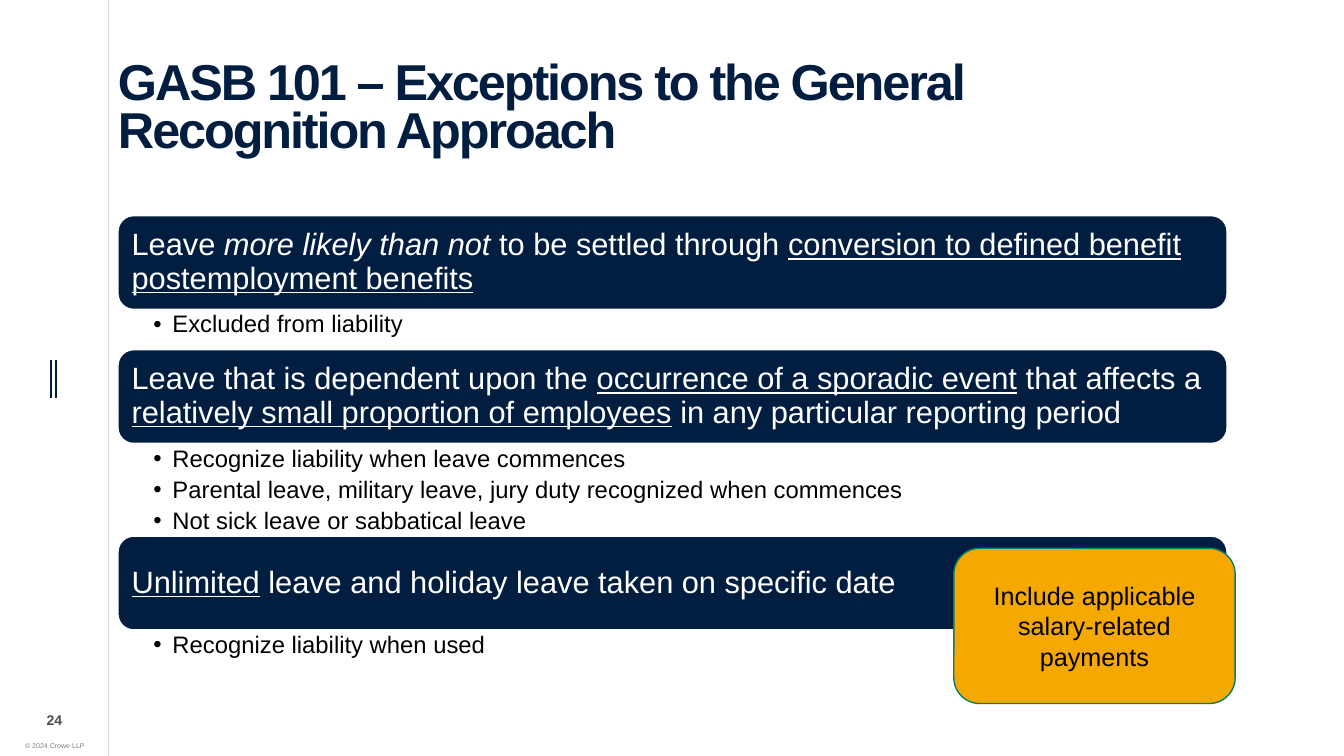
from dataclasses import dataclass

from lxml import etree
from pptx import Presentation
from pptx.dml.color import RGBColor
from pptx.enum.shapes import MSO_CONNECTOR, MSO_SHAPE
from pptx.enum.text import MSO_ANCHOR, PP_ALIGN
from pptx.oxml.ns import qn
from pptx.util import Inches, Pt

STRAIGHT = MSO_CONNECTOR.STRAIGHT
ROUND = MSO_SHAPE.ROUNDED_RECTANGLE
MIDDLE, TOP = MSO_ANCHOR.MIDDLE, MSO_ANCHOR.TOP
CENTER, LEFT = PP_ALIGN.CENTER, PP_ALIGN.LEFT
WIDE, HIGH = Inches(13.33), Inches(7.5)


@dataclass(frozen=True)
class Theme:
    """Colours and type sizes of the slide."""
    font: str = "Arial"
    navy: str = "011E41"
    gold: str = "F5A800"
    green: str = "047F68"
    white: str = "FFFFFF"
    black: str = "000000"
    gray: str = "808080"
    title: float = 36
    bar: float = 22
    note: float = 18
    point: float = 17
    page: float = 10
    legal: float = 5


THEME = Theme()
EDGE, SPAN = 8.78, 82.52
START, BAR, LIST, STEP = 28.53, 12.4, 5.33, 3.47

TOPICS = [
    ([("Leave ", ""), ("more likely than not", "i"),
      (" to be settled through ", ""),
      ("conversion to defined benefit postemployment benefits", "u")],
     ["Excluded from liability"]),
    ([("Leave that is dependent upon the ", ""),
      ("occurrence of a sporadic event", "u"), (" that affects a ", ""),
      ("relatively small proportion of employees", "u"),
      (" in any particular reporting period", "")],
     ["Recognize liability when leave commences",
      "Parental leave, military leave, jury duty recognized when commences",
      "Not sick leave or sabbatical leave"]),
    ([("Unlimited", "u"),
      (" leave and holiday leave taken on specific date", "")],
     ["Recognize liability when used"]),
]


def place(left, top, width, height):
    """Turn percent shares of the slide into lengths."""
    return (int(WIDE * left / 100), int(HIGH * top / 100),
            int(WIDE * width / 100), int(HIGH * height / 100))


def fade(node, share):
    """Make the colours inside an element partly opaque."""
    for tint in node.iter(qn("a:srgbClr")):
        etree.SubElement(tint, qn("a:alpha"), val=str(share * 1000))


def style(run, size, color, bold=False):
    """Set the font of a run."""
    run.font.name = THEME.font
    run.font.size = Pt(size)
    run.font.bold = bold
    run.font.color.rgb = RGBColor.from_string(color)


def frame(shape, inset, anchor, wrap=True):
    """Set the insets, anchor and wrap of a shape's text."""
    box = shape.text_frame
    box.word_wrap, box.vertical_anchor = wrap, anchor
    box.margin_left, box.margin_top, box.margin_right, box.margin_bottom = map(
        Inches, inset)
    return box


def label(slide, text, area, size, color, inset=(0, 0, 0, 0), anchor=TOP,
          align=LEFT, bold=False, wrap=True):
    """Add a text box in one style."""
    box = frame(slide.shapes.add_textbox(*place(*area)), inset, anchor, wrap)
    box.text = text
    for para in box.paragraphs:
        para.alignment = align
        for run in para.runs:
            style(run, size, color, bold)
    return box


def line(slide, left, top, height, color, width):
    """Add an upright line."""
    x, y, _, drop = place(left, top, 0, height)
    rule = slide.shapes.add_connector(STRAIGHT, x, y, x, y + drop)
    rule.line.color.rgb = RGBColor.from_string(color)
    rule.line.width = Pt(width)
    etree.SubElement(rule._element.spPr, qn("a:effectLst"))
    return rule


def panel(slide, area, fill, edge, inset):
    """Add a rounded panel and return its text frame."""
    shape = slide.shapes.add_shape(ROUND, *place(*area))
    shape.shadow.inherit = False
    shape.fill.solid()
    shape.fill.fore_color.rgb = RGBColor.from_string(fill)
    shape.line.color.rgb = RGBColor.from_string(edge)
    shape.line.width = Pt(1)
    return frame(shape, inset, MIDDLE)


def banner(slide, top, parts):
    """Add a topic bar with mixed emphasis."""
    box = panel(slide, (EDGE, top, SPAN, BAR), THEME.navy, THEME.white,
                (0.09,) * 4)
    para = box.paragraphs[0]
    para.alignment, para.line_spacing = LEFT, 0.9
    for text, mark in parts:
        run = para.add_run()
        run.text = text
        style(run, THEME.bar, THEME.white)
        run.font.italic = mark == "i"
        run.font.underline = mark == "u"


def points(slide, top, height, items):
    """Add the bullets below a topic bar."""
    box = label(slide, "\n".join(items), (EDGE, top, SPAN, height),
                THEME.point, THEME.black, (0.35, 0.03, 0.17, 0.03))
    for para in box.paragraphs:
        para.line_spacing, para.space_after = 0.9, Pt(4)
        props = para._p.get_or_add_pPr()
        props.set("marL", str(Inches(0.19)))
        props.set("indent", str(-Inches(0.19)))
        etree.SubElement(props, qn("a:buFont"), typeface=THEME.font)
        etree.SubElement(props, qn("a:buChar"), char="•")


def heading(slide):
    """Add the title."""
    box = label(slide, "GASB 101 – Exceptions to the General Recognition Approach",
                (EDGE, 5.33, SPAN, 20), THEME.title, THEME.navy,
                (0, 0.21, 0, 0), bold=True)
    para = box.paragraphs[0]
    para.line_spacing = 0.8
    para.runs[0].font._element.set("spc", "-150")


def margin(slide):
    """Add the rules, page number and copyright at the left."""
    for left in (3.83, 4.2):
        line(slide, left, 47.6, 5.07, THEME.navy, 1.5)
    fade(line(slide, 8.1, 0, 100, THEME.black, 0.5)._element, 20)
    label(slide, "© 2024 Crowe LLP", (1.05, 97.47, 6.08, 2.53), THEME.legal,
          THEME.gray, (0.1, 0.05, 0.1, 0.05), align=CENTER, wrap=False)
    page = label(slide, "24", (1.95, 93.6, 4.2, 3.33), THEME.page, THEME.black,
                 anchor=MIDDLE, align=CENTER, bold=True)
    fade(page._element, 70)


def callout(slide):
    """Add the gold note over the last bar."""
    box = panel(slide, (70.97, 72.53, 20.93, 20.53), THEME.gold, THEME.green,
                (0.1, 0.05, 0.1, 0.05))
    box.text = "Include applicable salary-related payments"
    para = box.paragraphs[0]
    para.alignment = CENTER
    style(para.runs[0], THEME.note, THEME.black)


def main():
    """Build and save the slide."""
    deck = Presentation()
    deck.slide_width, deck.slide_height = WIDE, HIGH
    slide = deck.slides.add_slide(deck.slide_layouts[6])
    margin(slide)
    heading(slide)
    top = START
    for parts, items in TOPICS:
        height = LIST + STEP * (len(items) - 1)
        banner(slide, top, parts)
        points(slide, top + BAR, height, items)
        top += BAR + height
    callout(slide)
    deck.save("out.pptx")


if __name__ == "__main__":
    main()
